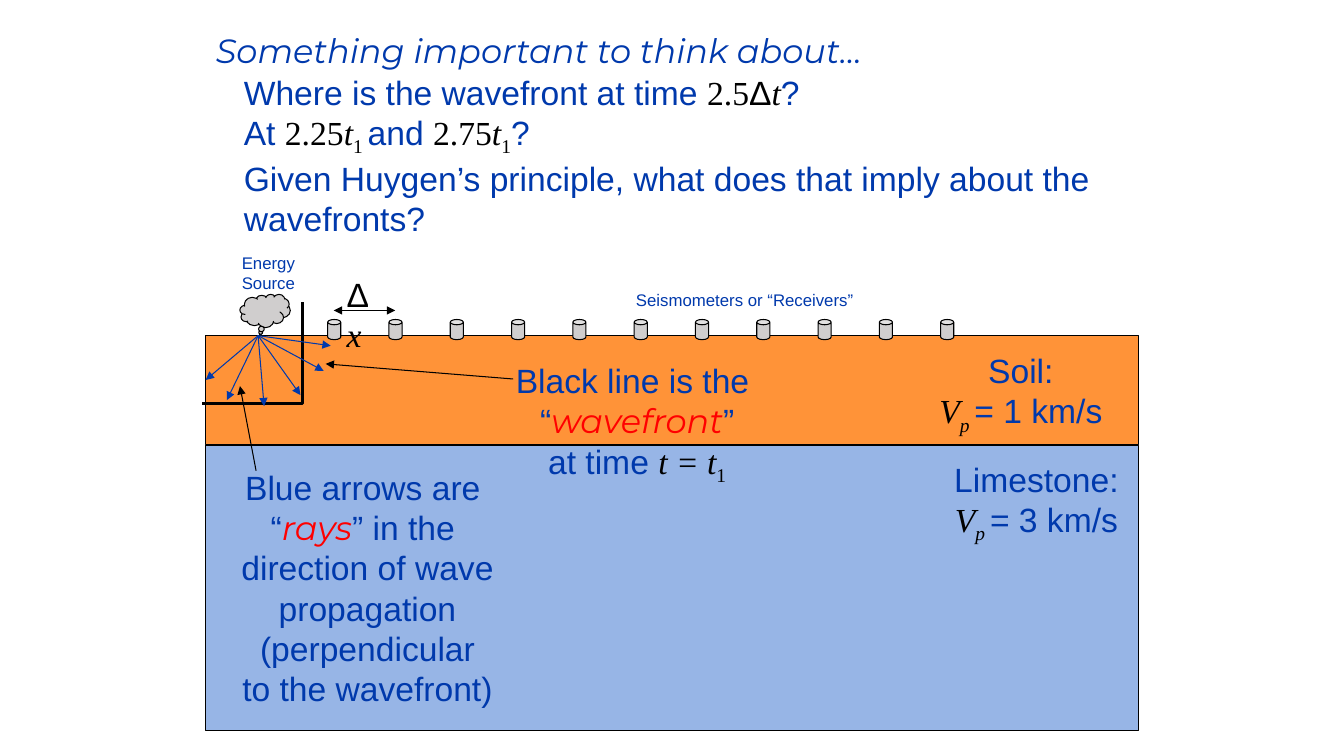
from dataclasses import dataclass
from typing import Optional

import pptx
import pptx.dml.color
import pptx.enum.shapes
import pptx.enum.text
import pptx.oxml.ns
import pptx.util
from lxml import etree

Inches = pptx.util.Inches
Pt = pptx.util.Pt
RGB = pptx.dml.color.RGBColor
SHAPE = pptx.enum.shapes.MSO_SHAPE
ALIGN = pptx.enum.text.PP_ALIGN
qn = pptx.oxml.ns.qn

BLUE = RGB(0x00, 0x39, 0xAC)
BLACK = RGB(0x00, 0x00, 0x00)
RED = RGB(0xFF, 0x00, 0x00)
ORANGE = RGB(0xFF, 0x93, 0x38)
LIGHT_BLUE = RGB(0x97, 0xB5, 0xE6)
GREY = RGB(0xD0, 0xCE, 0xCE)

# Run styles: font values, colour and baseline shift
ARIAL, SERIF, ACCENT = "Arial", "Times New Roman", "Montserrat"
STYLES = {
    "text": (dict(name=ARIAL, italic=False), BLUE, 0),
    "delta": (dict(name=ARIAL, italic=False), BLACK, 0),
    "num": (dict(name=SERIF, italic=False), BLACK, 0),
    "var": (dict(name=SERIF, italic=True), BLACK, 0),
    "sub": (dict(name=SERIF, italic=False), BLACK, -25000),
    "varsub": (dict(name=SERIF, italic=True), BLACK, -25000),
    "title": (dict(name=ACCENT, italic=True), BLUE, 0),
    "key": (dict(name=ACCENT, italic=True), RED, 0),
}


@dataclass
class Label:
    box: tuple
    lines: list  # each line is a string or a list of (text, style)
    size: int = 24
    align: ALIGN = ALIGN.LEFT
    wrap: bool = False
    indent: float = 0


@dataclass
class Arrow:
    start: tuple
    end: tuple
    color: RGB = BLACK
    both: bool = False


@dataclass
class Block:
    kind: SHAPE
    box: tuple
    fill: RGB
    adjust: tuple = ()


def fill_text(tf, label: Label) -> None:
    tf.word_wrap = label.wrap
    tf.auto_size = pptx.enum.text.MSO_AUTO_SIZE.NONE
    tf.vertical_anchor = pptx.enum.text.MSO_ANCHOR.TOP
    for i, line in enumerate(label.lines):
        p = tf.add_paragraph() if i else tf.paragraphs[0]
        p.alignment = label.align
        if label.indent:
            p._p.get_or_add_pPr().set("marL", str(Inches(label.indent)))
        for text, style in [(line, "text")] if isinstance(line, str) else line:
            values, color, baseline = STYLES[style]
            r = p.add_run()
            r.text = text
            for key, value in dict(values, size=Pt(label.size)).items():
                setattr(r.font, key, value)
            r.font.color.rgb = color
            if baseline:
                r._r.get_or_add_rPr().set("baseline", str(baseline))


def add_label(s, label: Label) -> None:
    fill_text(s.shapes.add_textbox(*map(Inches, label.box)).text_frame, label)


def add_block(s, block: Block) -> None:
    sp = s.shapes.add_shape(block.kind, *map(Inches, block.box))
    for i, value in enumerate(block.adjust):
        sp.adjustments[i] = value
    sp.shadow.inherit = False
    sp.fill.solid()
    sp.fill.fore_color.rgb = block.fill
    sp.line.color.rgb = BLACK
    sp.line.width = Pt(0.75)


def add_arrow(s, arrow: Arrow) -> None:
    c = s.shapes.add_connector(pptx.enum.shapes.MSO_CONNECTOR.STRAIGHT,
                               *map(Inches, arrow.start + arrow.end))
    c.line.color.rgb = arrow.color
    c.line.width = Pt(0.75)
    ln = c.line._get_or_add_ln()
    for tag in ("a:headEnd", "a:tailEnd") if arrow.both else ("a:tailEnd",):
        etree.SubElement(ln, qn(tag)).set("type", "triangle")
    etree.SubElement(c._element.spPr, qn("a:effectLst"))


def bezier(p0: tuple, p1: tuple, p2: tuple, p3: tuple, t: float) -> tuple:
    u = 1 - t
    weights = (u ** 3, 3 * u * u * t, 3 * u * t * t, t ** 3)
    return tuple(sum(w * p[i] for w, p in zip(weights, (p0, p1, p2, p3))) for i in (0, 1))


def add_wavefront(s, start: tuple, curves: list, steps: int = 8) -> None:
    points = [start]
    for curve in curves:
        p0 = points[-1]
        points += [bezier(p0, *curve, k / steps) for k in range(1, steps + 1)]
    fb = s.shapes.build_freeform(*start, scale=Inches(1))
    fb.add_line_segments(points[1:], close=False)
    sp = fb.convert_to_shape()
    sp.shadow.inherit = False
    sp.fill.background()
    sp.line.color.rgb = BLACK
    sp.line.width = Pt(2)


TITLE = Label((2.04, 0.25, 8.98, 0.51),
              [[("Something important to think about…", "title")]], wrap=True)

LAYERS = [
    Block(SHAPE.RECTANGLE, (2.04, 3.33, 9.25, 1.08), ORANGE),
    Block(SHAPE.RECTANGLE, (2.04, 4.42, 9.25, 2.83), LIGHT_BLUE),
]
SOURCE = Block(SHAPE.CLOUD_CALLOUT, (2.38, 2.92, 0.5, 0.33), GREY, (-0.094, 0.693))
RECEIVERS = [Block(SHAPE.CAN, (3.25 + 0.608 * i, 3.17, 0.13, 0.2), GREY, (0.404,))
             for i in range(11)]

WAVEFRONT_START = (3.29, 3.33)
WAVEFRONT = [
    ((3.3, 3.38), (3.3, 3.43), (3.28, 3.49)),
    ((3.27, 3.56), (3.23, 3.65), (3.2, 3.71)),
    ((3.17, 3.76), (3.14, 3.78), (3.1, 3.83)),
    ((3.05, 3.87), (3, 3.92), (2.92, 3.96)),
    ((2.85, 3.99), (2.74, 4.03), (2.65, 4.04)),
    ((2.56, 4.05), (2.48, 4.05), (2.4, 4.03)),
    ((2.31, 4.01), (2.23, 3.96), (2.17, 3.92)),
    ((2.11, 3.88), (2.07, 3.84), (2.04, 3.79)),
]

RAY_ENDS = [(2.04, 3.77), (2.25, 3.97), (2.62, 4.03), (2.98, 3.92), (3.21, 3.68), (3.28, 3.43)]
ARROWS = [Arrow((2.56, 3.33), end, BLUE) for end in RAY_ENDS] + [
    Arrow((5.09, 3.76), (3.23, 3.61)),
    Arrow((2.54, 4.67), (2.38, 3.83)),
    Arrow((3.31, 3.08), (3.92, 3.08), both=True),
]


def velocity(name: str, speed: int) -> list:
    return [name, [("V", "var"), ("p ", "varsub"), (f"= {speed} km/s", "text")]]


LABELS = [
    Label((2.04, 0.66, 8.98, 1.71), [
        [("Where is the wavefront at time ", "text"), ("2.5", "num"), ("Δ", "delta"),
         ("t", "var"), ("?", "text")],
        [("At ", "text"), ("2.25", "num"), ("t", "var"), ("1 ", "sub"), ("and ", "text"),
         ("2.75", "num"), ("t", "var"), ("1", "sub"), ("?", "text")],
        "Given Huygen’s principle, what does that imply about the",
        "wavefronts?"], wrap=True, indent=0.28),
    Label((2.3, 2.46, 0.73, 0.5), ["Energy", "Source"], 12),
    Label((6.21, 2.83, 2.43, 0.3), ["Seismometers or “Receivers”"], 12),
    Label((3.34, 2.67, 0.56, 0.5), [[("Δ", "delta"), ("x", "var")]], wrap=True),
    Label((9.18, 3.42, 1.89, 0.91), velocity("Soil:", 1), align=ALIGN.CENTER),
    Label((9.31, 4.5, 1.94, 0.91), velocity("Limestone:", 3), align=ALIGN.CENTER),
    Label((5, 3.52, 2.64, 1.31), [
        "Black line is the ",
        [("“", "text"), ("wavefront", "key"), ("”", "text")],
        [("at time ", "text"), ("t = t", "var"), ("1", "sub")]], align=ALIGN.CENTER),
    Label((2.28, 4.58, 2.73, 2.52), [
        "Blue arrows are ",
        [("“", "text"), ("rays", "key"), ("” in the ", "text")],
        "direction of wave", "propagation", "(perpendicular", "to the wavefront)"],
        align=ALIGN.CENTER),
]


def main() -> None:
    prs = pptx.Presentation()
    prs.slide_width, prs.slide_height = Inches(13.33), Inches(7.5)
    s = prs.slides.add_slide(prs.slide_layouts[5])

    # Title
    title = s.shapes.title
    for key, value in zip(("left", "top", "width", "height"), TITLE.box):
        setattr(title, key, Inches(value))
    fill_text(title.text_frame, TITLE)

    # Ground layers, energy source and receivers
    for block in LAYERS + [SOURCE] + RECEIVERS:
        add_block(s, block)

    # Wavefront, rays and pointers
    add_wavefront(s, WAVEFRONT_START, WAVEFRONT)
    for arrow in ARROWS:
        add_arrow(s, arrow)

    # Text
    for label in LABELS:
        add_label(s, label)

    prs.save("out.pptx")


if __name__ == "__main__":
    main()
